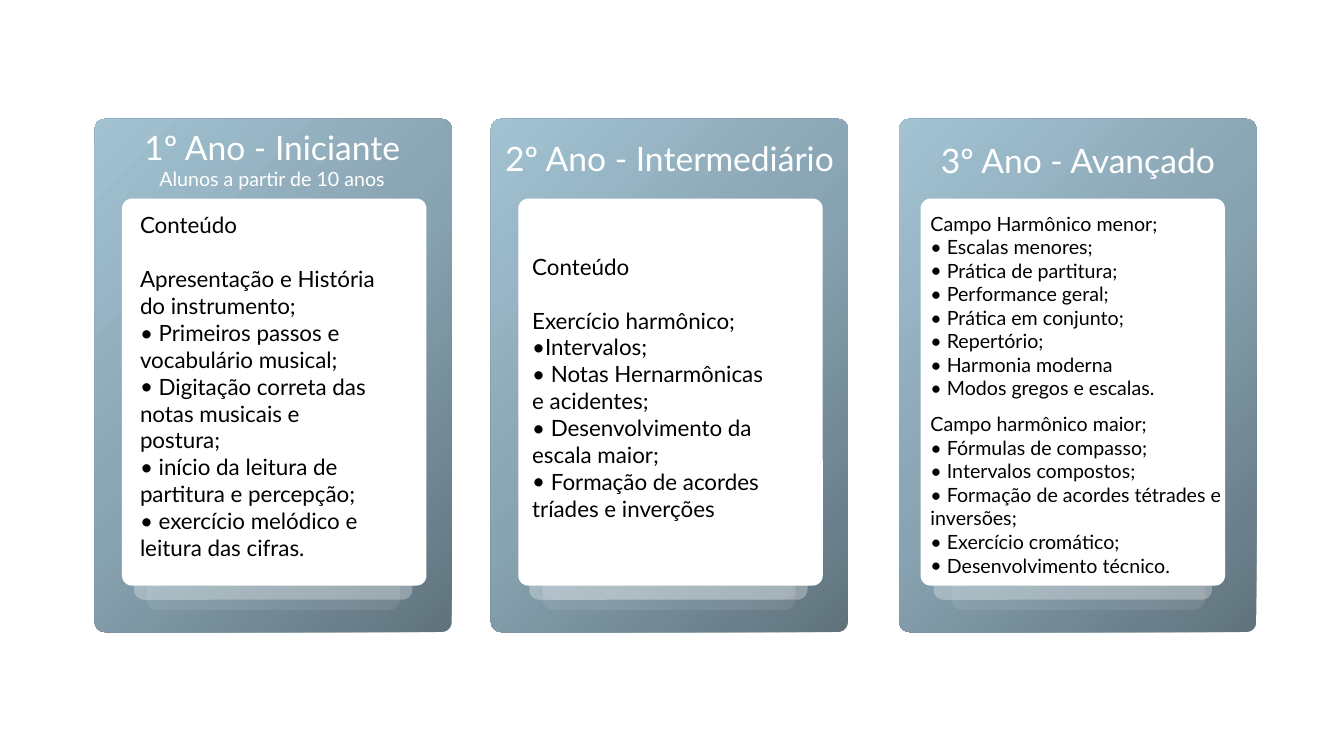
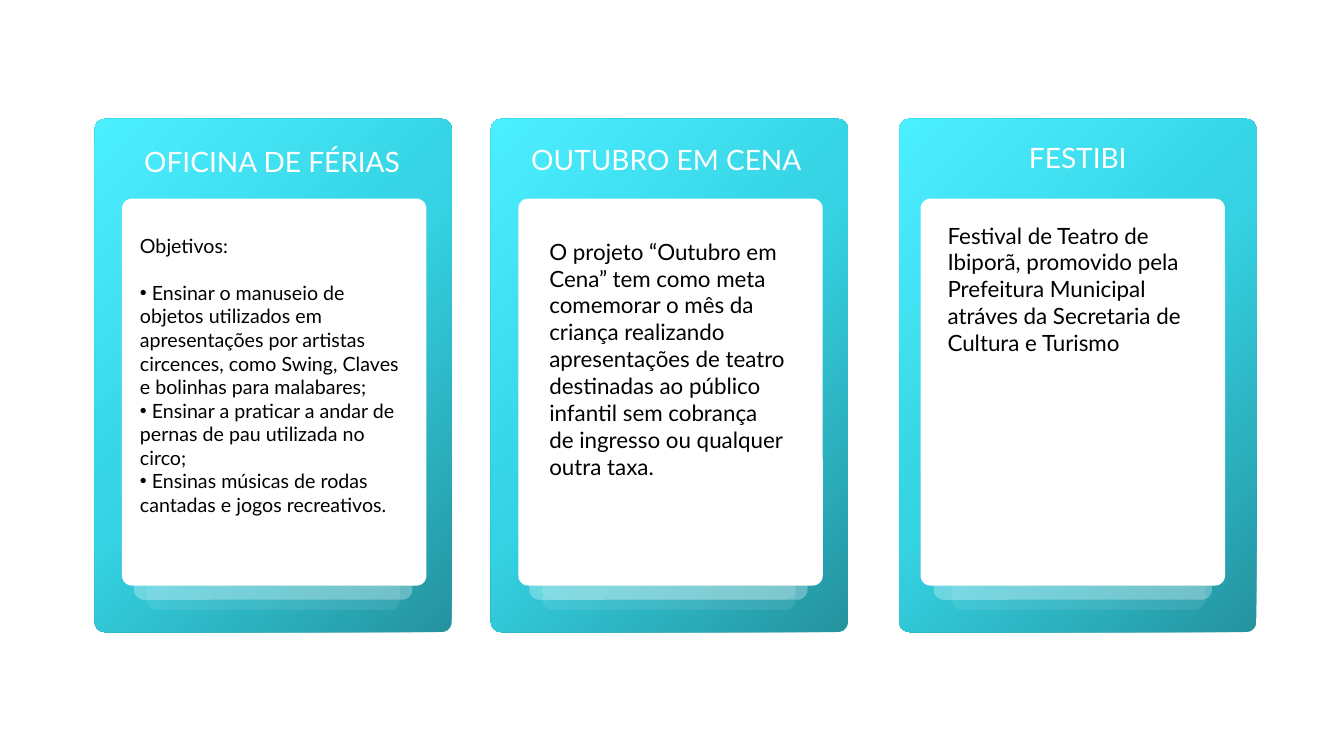
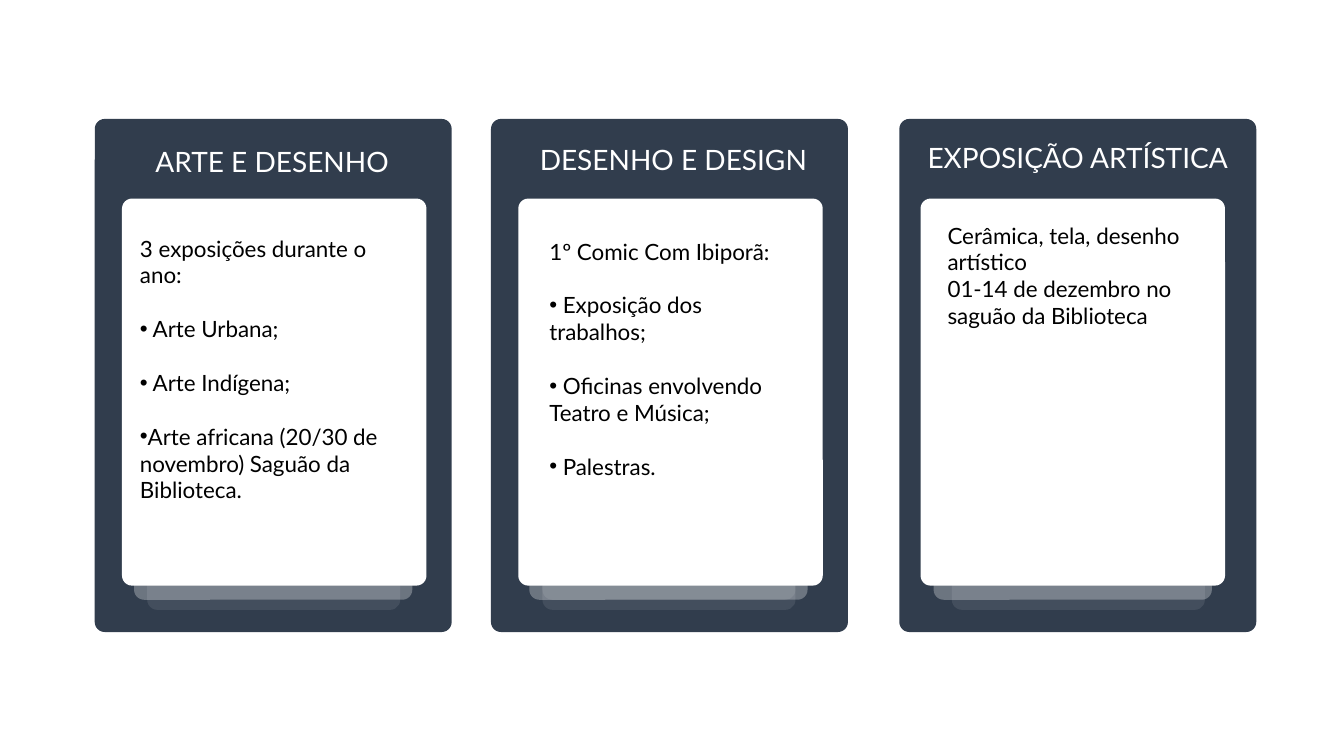
import pptx
import pptx.dml.color
import pptx.enum.shapes
import pptx.enum.text
import pptx.oxml.ns
import pptx.util
import lxml.etree
from dataclasses import dataclass

PX = 9144
FONT = "Lato"
WHITE, BLACK = "FFFFFF", "000000"
CORNER = 10
LINE_FACTOR = 1.2

CARD_TOP, CARD_WIDTH, CARD_HEIGHT = 118, 354, 509
PANEL_TOP, PANEL_WIDTH, PANEL_HEIGHT = 197, 302, 384
SHEET_HEIGHT = 281
WIDE_TOP, WIDE_WIDTH, WIDE_OPACITY = 314, 276, 29
NARROW_WIDTH, NARROW_OPACITY = 251, 9
TITLE_WIDTH = 400

STEEL = ("60737D", "88A3B1", "A2C2D2")
TURQUOISE = ("24939F", "34D2E2", "4BEEFF")
NAVY = ("313D4D",)


@dataclass
class Column:
    card: int
    panel: int
    wide: int
    narrow: int
    narrow_tops: tuple


@dataclass
class Course:
    title: tuple
    title_box: tuple
    title_sizes: tuple
    bodies: list
    body_size: int = 16


COLUMNS = [
    Column(94, 121, 133, 146, (324,)),
    Column(487, 514, 525, 538, (324, 314)),
    Column(892, 913, 926, 944, (324,)),
]

MUSIC = [
    Course(
        ("1º Ano - Iniciante", "Alunos a partir de 10 anos"), (70, 123, 93), (24, 14),
        [((129, 205, 255, 360), [
            ["Conteúdo"],
            ["Apresentação e História do instrumento;",
             "• Primeiros passos e vocabulário musical;",
             "• Digitação correta das notas musicais e postura;",
             "• início da leitura de partitura e percepção;",
             "• exercício melódico e leitura das cifras."],
        ])],
    ),
    Course(
        ("2º Ano - Intermediário",), (464, 134, 70), (24,),
        [((518, 246, 255, 279), [
            ["Conteúdo"],
            ["Exercício harmônico;",
             "•Intervalos;",
             "• Notas Hernarmônicas e acidentes;",
             "• Desenvolvimento da escala maior;",
             "• Formação de acordes tríades e inverções"],
        ])],
    ),
    Course(
        ("3º Ano - Avançado",), (869, 136, 70), (24,),
        [((913, 205, 364, 199), [
            ["Campo Harmônico menor;",
             "• Escalas menores;",
             "• Prática de partitura;",
             "• Performance geral;",
             "• Prática em conjunto;",
             "• Repertório;",
             "• Harmonia moderna",
             "• Modos gregos e escalas."],
        ]),
         ((913, 404, 369, 175), [
            ["Campo harmônico maior;",
             "• Fórmulas de compasso;",
             "• Intervalos compostos;",
             "• Formação de acordes tétrades e inversões;",
             "• Exercício cromático;",
             "• Desenvolvimento técnico."],
        ])],
        14,
    ),
]

THEATRE = [
    Course(
        ("OFICINA DE FÉRIAS",), (70, 140, 39), (20,),
        [((129, 227, 284, 340), [
            ["Objetivos:"],
            ["• Ensinar o manuseio de objetos utilizados em apresentações por artistas "
             "circences, como Swing, Claves e bolinhas para malabares;",
             "• Ensinar a praticar a andar de pernas de pau utilizada no circo;",
             "• Ensinas músicas de rodas cantadas e jogos recreativos."],
        ])],
        14,
    ),
    Course(
        ("OUTUBRO EM CENA",), (461, 138, 73), (20,),
        [((535, 231, 255, 306), [
            ["O projeto “Outubro em Cena” tem como meta comemorar o mês da criança "
             "realizando apresentações de teatro destinadas ao público infantil sem "
             "cobrança de ingresso ou qualquer outra taxa."],
        ])],
    ),
    Course(
        ("FESTIBI",), (869, 136, 73), (20,),
        [((930, 215, 270, 145), [
            ["Festival de Teatro de Ibiporã, promovido pela Prefeitura Municipal "
             "atráves da Secretaria de Cultura e Turismo"],
        ])],
    ),
]

ART = [
    Course(
        ("ARTE E DESENHO",), (70, 140, 39), (20,),
        [((129, 228, 284, 360), [
            ["3 exposições durante o ano:"],
            ["• Arte Urbana;"],
            ["• Arte Indígena;"],
            ["•Arte africana (20/30 de novembro) Saguão da Biblioteca."],
        ])],
    ),
    Course(
        ("DESENHO E DESIGN",), (468, 138, 73), (20,),
        [((535, 231, 255, 333), [
            ["1º Comic Com Ibiporã:"],
            ["• Exposição dos trabalhos;"],
            ["• Oficinas envolvendo Teatro e Música;"],
            ["• Palestras."],
        ])],
    ),
    Course(
        ("EXPOSIÇÃO ARTÍSTICA",), (869, 136, 73), (20,),
        [((930, 215, 270, 145), [
            ["Cerâmica, tela, desenho artístico",
             "01-14 de dezembro no saguão da Biblioteca"],
        ])],
    ),
]

PAGES = [(STEEL, MUSIC, FONT), (TURQUOISE, THEATRE, "Arial"), (NAVY, ART, "Arial")]


def emu(*lengths):
    return [pptx.util.Emu(length * PX) for length in lengths]


def rgb(colour):
    return pptx.dml.color.RGBColor.from_string(colour)


def add_xml(parent, tag, **attributes):
    return lxml.etree.SubElement(parent, pptx.oxml.ns.qn(tag), attributes)


def fill_gradient(shape, colours):
    shape.fill.gradient()
    shape.fill.gradient_angle = 135
    stops = shape._element.spPr.find(".//" + pptx.oxml.ns.qn("a:gsLst"))
    for stop in list(stops):
        stops.remove(stop)
    for index, colour in enumerate(colours):
        position = index * 100000 // (len(colours) - 1)
        stop = add_xml(stops, "a:gs", pos=str(position))
        add_xml(stop, "a:srgbClr", val=colour)


def add_rounded(slide, box, colours, opacity=100):
    kind = pptx.enum.shapes.MSO_SHAPE.ROUNDED_RECTANGLE
    shape = slide.shapes.add_shape(kind, *emu(*box))
    shape.shadow.inherit = False
    shape.adjustments[0] = round(CORNER / min(box[2:]), 3)
    shape.line.fill.background()
    if len(colours) > 1:
        fill_gradient(shape, colours)
        return
    shape.fill.solid()
    shape.fill.fore_color.rgb = rgb(colours[0])
    if opacity < 100:
        solid = shape._element.spPr.find(".//" + pptx.oxml.ns.qn("a:srgbClr"))
        add_xml(solid, "a:alpha", val=str(opacity * 1000))


def add_bullet(paragraph, typeface):
    properties = paragraph._p.get_or_add_pPr()
    add_xml(properties, "a:buFont", typeface=typeface)
    add_xml(properties, "a:buChar", char="•")


def add_text(slide, box, groups, sizes, colour=BLACK, centred=False, inset=None,
             bullet_font=FONT):
    frame = slide.shapes.add_textbox(*emu(*box)).text_frame
    frame.word_wrap = True
    if inset is not None:
        (frame.margin_left, frame.margin_top,
         frame.margin_right, frame.margin_bottom) = emu(*[inset] * 4)
    lines = [(line, place == 0) for group in groups for place, line in enumerate(group)]
    for index, (line, opens_group) in enumerate(lines):
        paragraph = frame.paragraphs[0] if index == 0 else frame.add_paragraph()
        size = sizes[min(index, len(sizes) - 1)]
        if index and opens_group:
            paragraph.space_before = pptx.util.Pt(round(size * LINE_FACTOR, 1))
        if centred:
            paragraph.alignment = pptx.enum.text.PP_ALIGN.CENTER
        if line.startswith("•"):
            add_bullet(paragraph, bullet_font)
        run = paragraph.add_run()
        run.text = line.removeprefix("•")
        run.font.name = FONT
        run.font.size = pptx.util.Pt(size)
        run.font.color.rgb = rgb(colour)


def add_course(slide, column, course, colours, bullet_font):
    add_rounded(slide, (column.card, CARD_TOP, CARD_WIDTH, CARD_HEIGHT), colours)
    add_rounded(slide, (column.panel, PANEL_TOP, PANEL_WIDTH, PANEL_HEIGHT), (WHITE,))
    for top in column.narrow_tops:
        add_rounded(slide, (column.narrow, top, NARROW_WIDTH, SHEET_HEIGHT),
                    (WHITE,), NARROW_OPACITY)
    add_rounded(slide, (column.wide, WIDE_TOP, WIDE_WIDTH, SHEET_HEIGHT),
                (WHITE,), WIDE_OPACITY)
    left, top, height = course.title_box
    add_text(slide, (left, top, TITLE_WIDTH, height), [course.title], course.title_sizes,
             colour=WHITE, centred=True, inset=3)
    for box, groups in course.bodies:
        add_text(slide, box, groups, (course.body_size,), bullet_font=bullet_font)


def main():
    deck = pptx.Presentation()
    deck.slide_width, deck.slide_height = emu(1333, 750)
    for colours, courses, bullet_font in PAGES:
        slide = deck.slides.add_slide(deck.slide_layouts[6])
        for column, course in zip(COLUMNS, courses):
            add_course(slide, column, course, colours, bullet_font)
    deck.save("out.pptx")


if __name__ == "__main__":
    main()
